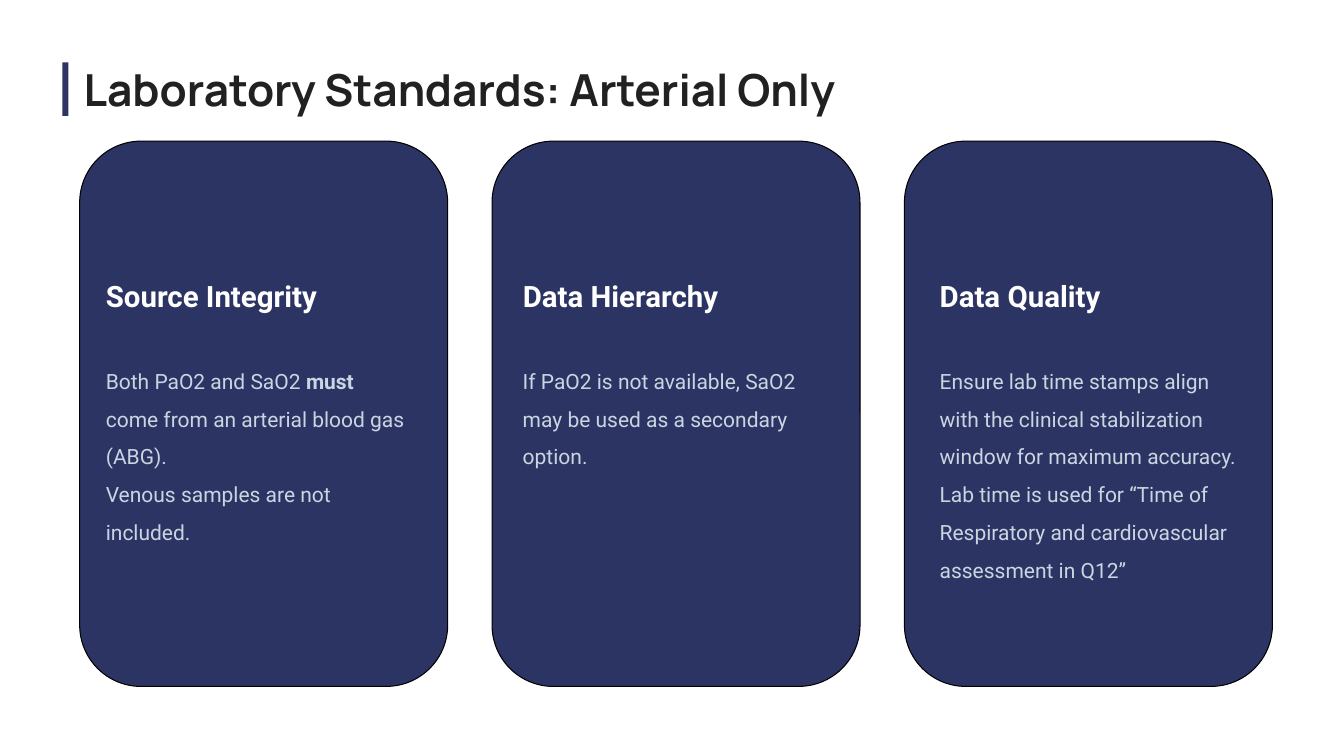
from pptx import Presentation
from pptx import util as u
from pptx.dml.color import RGBColor
from pptx.enum import shapes, text

NAVY = RGBColor(0x2C, 0x34, 0x64)
BLACK = RGBColor(0, 0, 0)
INK = RGBColor(0x21, 0x21, 0x21)
WHITE = RGBColor(0xFF, 0xFF, 0xFF)
MIST = RGBColor(0xCB, 0xD5, 0xE1)

WIDTH, HEIGHT = 13.33, 7.5
CARD_LEFT, CARD_TOP, CARD_W, CARD_H = 0.79, 1.4, 3.65, 5.41
CARD_PITCH = 4.09
INSET, INSET_STEP = 0.26, 0.045  # the text drifts right a little card by card

# Each paragraph is a list of (text, bold) runs.
CARDS = [
    ("Source Integrity", [
        [("Both PaO2 and SaO2 ", False), ("must", True),
         (" come from an arterial blood gas (ABG).", False)],
        [("Venous samples are not included.", False)]]),
    ("Data Hierarchy", [
        [("If PaO2 is not available, SaO2 may be used as a secondary option.", False)]]),
    ("Data Quality", [
        [("Ensure lab time stamps align with the clinical stabilization window "
          "for maximum accuracy.", False)],
        [("Lab time is used for “Time of Respiratory and cardiovascular "
          "assessment in Q12”", False)]]),
]


def inches(*box):
    return [u.Inches(v) for v in box]


def add_block(s, kind, box, line=None):
    sp = s.shapes.add_shape(kind, *inches(*box))
    sp.shadow.inherit = False
    sp.fill.solid()
    sp.fill.fore_color.rgb = NAVY
    if line is None:
        sp.line.fill.background()
    else:
        sp.line.color.rgb = line
        sp.line.width = u.Pt(0.75)
    return sp


def fill_text(sp, paragraphs, font, size, color, spacing=1.0):
    tf = sp.text_frame
    tf.word_wrap = True
    tf.auto_size = text.MSO_AUTO_SIZE.NONE
    tf.vertical_anchor = text.MSO_ANCHOR.TOP
    tf.margin_left = tf.margin_right = tf.margin_top = tf.margin_bottom = 0
    for i, runs in enumerate(paragraphs):
        p = tf.add_paragraph() if i else tf.paragraphs[0]
        p.alignment = text.PP_ALIGN.LEFT
        p.line_spacing = spacing
        for words, bold in runs:
            r = p.add_run()
            r.text = words
            r.font.name, r.font.size, r.font.bold = font, u.Pt(size), bold
            r.font.color.rgb = color


def add_title(s, words, left, top, width, height):
    """Title with a vertical accent bar at the left edge of its box."""
    add_block(s, shapes.MSO_SHAPE.RECTANGLE, (left, top, 0.06, height))
    title = s.shapes.title
    title.left, title.top, title.width, title.height = inches(
        left + 0.21, top, width - 0.21, height)
    fill_text(title, [[(words, True)]], "Manrope", 31.5, INK)


def add_card(s, heading, body, left, top, width, height, inset):
    add_block(s, shapes.MSO_SHAPE.ROUNDED_RECTANGLE,
              (left, top, width, height), BLACK)
    x = left + inset
    head = s.shapes.add_textbox(*inches(x, top + 1.36, 3.11, 0.35))
    fill_text(head, [[(heading, True)]], "Roboto", 21, WHITE)
    note = s.shapes.add_textbox(*inches(x, top + 2.13, 2.97, height - 2.51))
    fill_text(note, body, "Roboto", 15, MIST, 1.5)


def main():
    prs = Presentation()
    prs.slide_width, prs.slide_height = inches(WIDTH, HEIGHT)
    s = prs.slides.add_slide(prs.slide_layouts[5])
    add_title(s, "Laboratory Standards: Arterial Only", 0.62, 0.62, 12.68, 0.53)
    for i, (heading, body) in enumerate(CARDS):
        add_card(s, heading, body, CARD_LEFT + i * CARD_PITCH, CARD_TOP,
                 CARD_W, CARD_H, INSET + i * INSET_STEP)
    prs.save("out.pptx")


if __name__ == "__main__":
    main()
